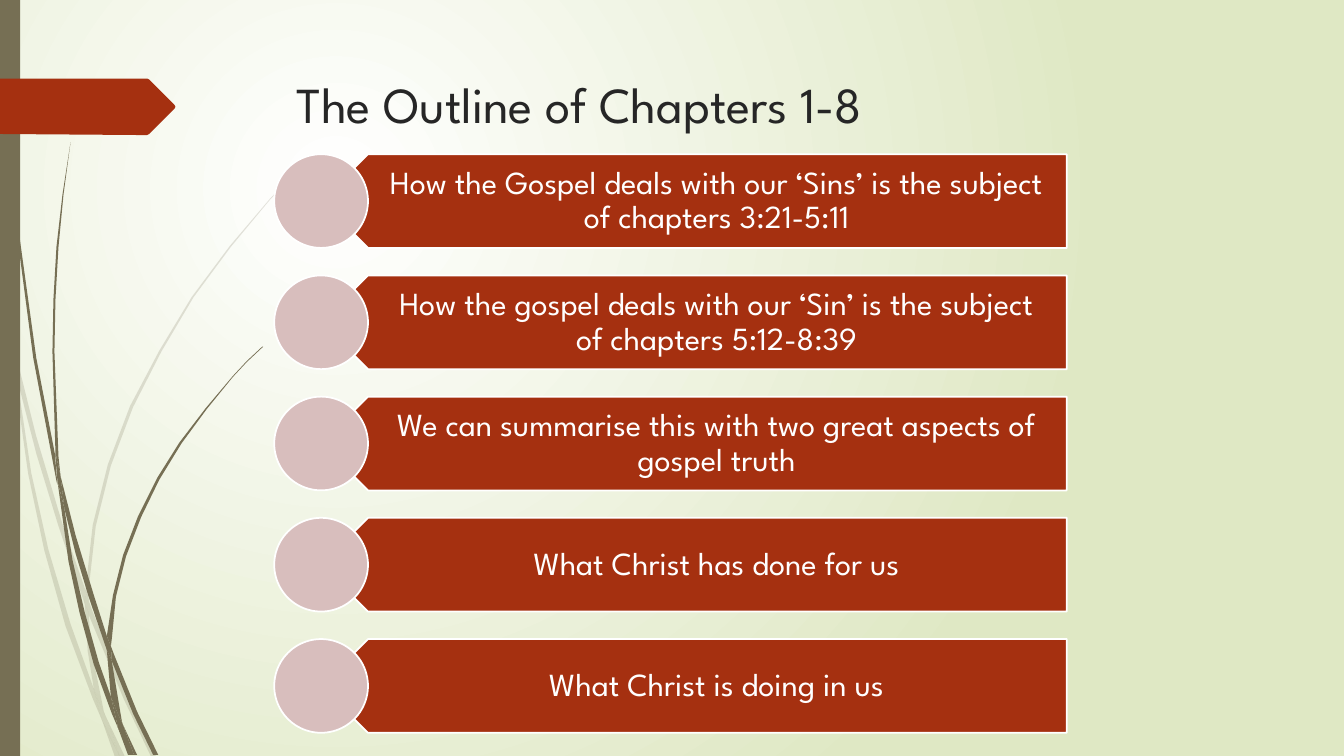
from lxml import etree
from pptx import Presentation
from pptx.dml.color import RGBColor
from pptx.enum.shapes import MSO_SHAPE
from pptx.enum.text import MSO_ANCHOR, PP_ALIGN
from pptx.oxml.ns import qn
from pptx.util import Inches, Pt

PENTAGON, OVAL, RECTANGLE = MSO_SHAPE.PENTAGON, MSO_SHAPE.OVAL, MSO_SHAPE.RECTANGLE
TOP, MIDDLE = MSO_ANCHOR.TOP, MSO_ANCHOR.MIDDLE
LEFT, CENTER = PP_ALIGN.LEFT, PP_ALIGN.CENTER

WHITE = RGBColor(0xFF, 0xFF, 0xFF)
PALE_GREEN = RGBColor(0xDF, 0xE8, 0xC4)
OLIVE = RGBColor(0x76, 0x6F, 0x54)
RUST = RGBColor(0xA5, 0x30, 0x10)
ROSE = RGBColor(0xD8, 0xBE, 0xBD)
INK = RGBColor(0x26, 0x26, 0x26)
FONT = "League Spartan"

TITLE = "The Outline of Chapters 1-8"
POINTS = [
    "How the Gospel deals with our ‘Sins’ is the subject of chapters 3:21-5:11",
    "How the gospel deals with our ‘Sin’ is the subject of chapters 5:12-8:39",
    "We can summarise this with two great aspects of gospel truth",
    "What Christ has done for us",
    "What Christ is doing in us",
]

# Outlines in inches from the top left corner of the grass
FAINT_GRASS = [
    [(0.11, 3.5), (0.09, 3.22), (0, 2.82), (0, 2.99), (0.1, 3.44)],
    [(0.58, 5.22), (0.84, 5.99), (0.85, 5.86), (0.62, 5.2), (0.36, 4.33),
     (0.14, 3.45), (0.17, 3.76), (0.36, 4.5)],
    [(0.92, 6.07), (0.88, 5.96), (0.88, 6.1), (1.23, 6.94), (1.5, 7.51),
     (1.55, 7.51), (1.27, 6.92)],
    [(1.19, 7.51), (1.24, 7.51), (1.05, 7.11)],
    [(0.93, 6.83), (0.7, 6.19), (0.48, 5.45), (0.31, 4.69), (0.17, 3.76),
     (0.11, 3.5), (0.28, 4.7), (0.44, 5.46), (0.65, 6.21), (0.92, 6.93),
     (1.01, 7.14), (0.99, 7.07)],
    [(0.84, 5.99), (0.87, 6.46), (0.93, 6.83), (0.96, 6.92), (1.05, 7.11),
     (1.03, 7.06), (0.91, 6.46), (0.88, 6.1), (0.88, 6.08)],
    [(0.88, 5.84), (0.95, 5.22), (1.1, 4.62), (1.32, 4.04), (1.6, 3.49),
     (1.92, 2.95), (2.29, 2.45), (2.68, 1.98), (2.9, 1.75), (3.12, 1.54),
     (3.12, 1.53), (2.89, 1.75), (2.68, 1.97), (2.28, 2.44), (1.9, 2.95),
     (1.58, 3.48), (1.29, 4.03), (1.07, 4.61), (0.92, 5.21), (0.85, 5.84),
     (0.85, 5.86), (0.88, 5.96)],
    [(1.01, 7.14), (1.14, 7.51), (1.19, 7.51)],
    [(0.88, 6.08), (0.88, 6.1), (0.88, 5.96), (0.85, 5.86), (0.84, 5.99)],
    [(0.96, 6.92), (0.93, 6.83), (0.99, 7.07), (1.01, 7.14), (1.19, 7.51),
     (1.05, 7.11)],
]
DARK_GRASS = [
    [(0.07, 1.1), (0.17, 2.33), (0.33, 3.55), (0.56, 4.77), (0.57, 4.81),
     (0.55, 4.57), (0.55, 4.53), (0.36, 3.55), (0.19, 2.32), (0.08, 1.09),
     (0.05, 0.48), (0.04, 0), (0.03, 0), (0.04, 0.48)],
    [(0.88, 5.92), (1.06, 6.45), (1.06, 6.31), (0.93, 5.9), (0.75, 5.31),
     (0.6, 4.72), (0.64, 5.05), (0.75, 5.49)],
    [(1.13, 6.49), (1.1, 6.41), (1.11, 6.56), (1.32, 7.08), (1.52, 7.49),
     (1.57, 7.49), (1.36, 7.06)],
    [(1.1, 6.91), (0.98, 6.57), (0.84, 6.07), (0.72, 5.56), (0.64, 5.05),
     (0.57, 4.77), (0.68, 5.57), (0.79, 6.08), (0.93, 6.59), (1.11, 7.08),
     (1.17, 7.22), (1.16, 7.17)],
    [(0.6, 4.72), (0.58, 4.53), (0.54, 3.49), (0.55, 2.97), (0.58, 2.45),
     (0.63, 1.93), (0.7, 1.41), (0.62, 1.93), (0.56, 2.45), (0.53, 2.97),
     (0.52, 3.49), (0.55, 4.49)],
    [(1.33, 7.49), (1.36, 7.49), (1.22, 7.19)],
    [(0.57, 4.77), (0.64, 5.05), (0.6, 4.72), (0.55, 4.49), (0.55, 4.53)],
    [(1.11, 6.33), (1.15, 5.92), (1.25, 5.52), (1.4, 5.13), (1.58, 4.76),
     (1.8, 4.4), (2.05, 4.06), (2.31, 3.74), (2.45, 3.59), (2.61, 3.44),
     (2.6, 3.44), (2.45, 3.58), (2.31, 3.73), (2.04, 4.05), (1.78, 4.39),
     (1.56, 4.74), (1.37, 5.12), (1.22, 5.51), (1.12, 5.91), (1.06, 6.31),
     (1.1, 6.41)],
    [(1.17, 7.22), (1.27, 7.49), (1.31, 7.49)],
    [(1.06, 6.45), (1.1, 6.91), (1.16, 7.06), (1.22, 7.19), (1.21, 7.16),
     (1.11, 6.56), (1.09, 6.51)],
    [(1.06, 6.45), (1.09, 6.51), (1.11, 6.56), (1.1, 6.41), (1.06, 6.31)],
    [(1.16, 7.06), (1.1, 6.91), (1.16, 7.17), (1.17, 7.22), (1.3, 7.49),
     (1.33, 7.49), (1.22, 7.19)],
]
BANNER = [(0, 0), (1.46, 0), (1.48, 0.01), (1.73, 0.26), (1.74, 0.28),
          (1.73, 0.3), (1.48, 0.55), (1.46, 0.56), (1.36, 0.56), (0, 0.55)]


def paint(shape, color, outlined=False):
    shape.shadow.inherit = False
    shape.fill.solid()
    shape.fill.fore_color.rgb = color
    if outlined:
        shape.line.color.rgb = WHITE
        shape.line.width = Pt(1.25)
    else:
        shape.line.fill.background()


def add_outline(slide, left, top, points, color):
    corners = [(Inches(left + x), Inches(top + y)) for x, y in points]
    builder = slide.shapes.build_freeform(*corners[0], scale=1.0)
    builder.add_line_segments(corners[1:], close=True)
    outline = builder.convert_to_shape()
    paint(outline, color)
    return outline


def add_preset(slide, kind, left, top, width, height, color, outlined=False):
    shape = slide.shapes.add_shape(
        kind, Inches(left), Inches(top), Inches(width), Inches(height))
    paint(shape, color, outlined)
    return shape


def add_text(slide, left, top, width, height, text, size, color, align=LEFT,
             anchor=TOP, insets=(0.1, 0.05, 0.1, 0.05), spacing=1.0):
    """Place one paragraph; insets run left, top, right, bottom."""
    frame = slide.shapes.add_textbox(
        Inches(left), Inches(top), Inches(width), Inches(height)).text_frame
    frame.word_wrap = True
    frame.vertical_anchor = anchor
    (frame.margin_left, frame.margin_top,
     frame.margin_right, frame.margin_bottom) = map(Inches, insets)
    paragraph = frame.paragraphs[0]
    paragraph.alignment = align
    paragraph.line_spacing = spacing
    run = paragraph.add_run()
    run.text = text
    run.font.name = FONT
    run.font.size = Pt(size)
    run.font.color.rgb = color


def paint_background(slide):
    """Radial gradient, white at the upper left."""
    fill = slide.background.fill
    fill.gradient()
    for stop, color in zip(fill.gradient_stops, (WHITE, PALE_GREEN)):
        stop.color.rgb = color
    gradient = slide.element.find(".//" + qn("a:gradFill"))
    gradient.remove(gradient.find(qn("a:lin")))
    circle = etree.SubElement(gradient, qn("a:path"), path="circle")
    etree.SubElement(circle, qn("a:fillToRect"),
                     l="50000", t="50000", r="100000", b="100000")


def draw_grass(slide, left, top):
    for points in FAINT_GRASS:
        blade = add_outline(slide, left, top, points, OLIVE)
        color = blade.fill._xPr.find(".//" + qn("a:srgbClr"))
        etree.SubElement(color, qn("a:alpha"), val="20000")
    for points in DARK_GRASS:
        add_outline(slide, left, top, points, OLIVE)


def draw_points(slide, left, top, width, height):
    """Equal rows, each a disc overlapping the tip of an arrow bar."""
    disc = 0.93
    pitch = (height - disc) / (len(POINTS) - 1)
    bar_left, text_left = left + disc / 2, left + 0.69
    right = left + width
    for row, text in enumerate(POINTS):
        y = top + row * pitch
        bar = add_preset(slide, PENTAGON, bar_left, y, right - bar_left, disc,
                         RUST, outlined=True)
        bar.rotation = 180
        add_text(slide, text_left, y, right - text_left, disc, text, 23, WHITE,
                 CENTER, MIDDLE, (0.41, 0.1, 0.18, 0.1), 0.9)
        add_preset(slide, OVAL, left, y, disc, disc, ROSE, outlined=True)


def main():
    deck = Presentation()
    deck.slide_width, deck.slide_height = Inches(13.33), Inches(7.5)
    slide = deck.slides.add_slide(deck.slide_layouts[6])
    paint_background(slide)
    draw_grass(slide, 0, 0)
    add_preset(slide, RECTANGLE, 0, 0, 0.2, 7.5, OLIVE)
    add_outline(slide, 0, 0.78, BANNER, RUST)
    add_text(slide, 2.84, 0.68, 9.75, 0.94, TITLE, 36, INK)
    draw_points(slide, 2.72, 1.53, 7.86, 5.74)
    deck.save("out.pptx")


if __name__ == "__main__":
    main()
